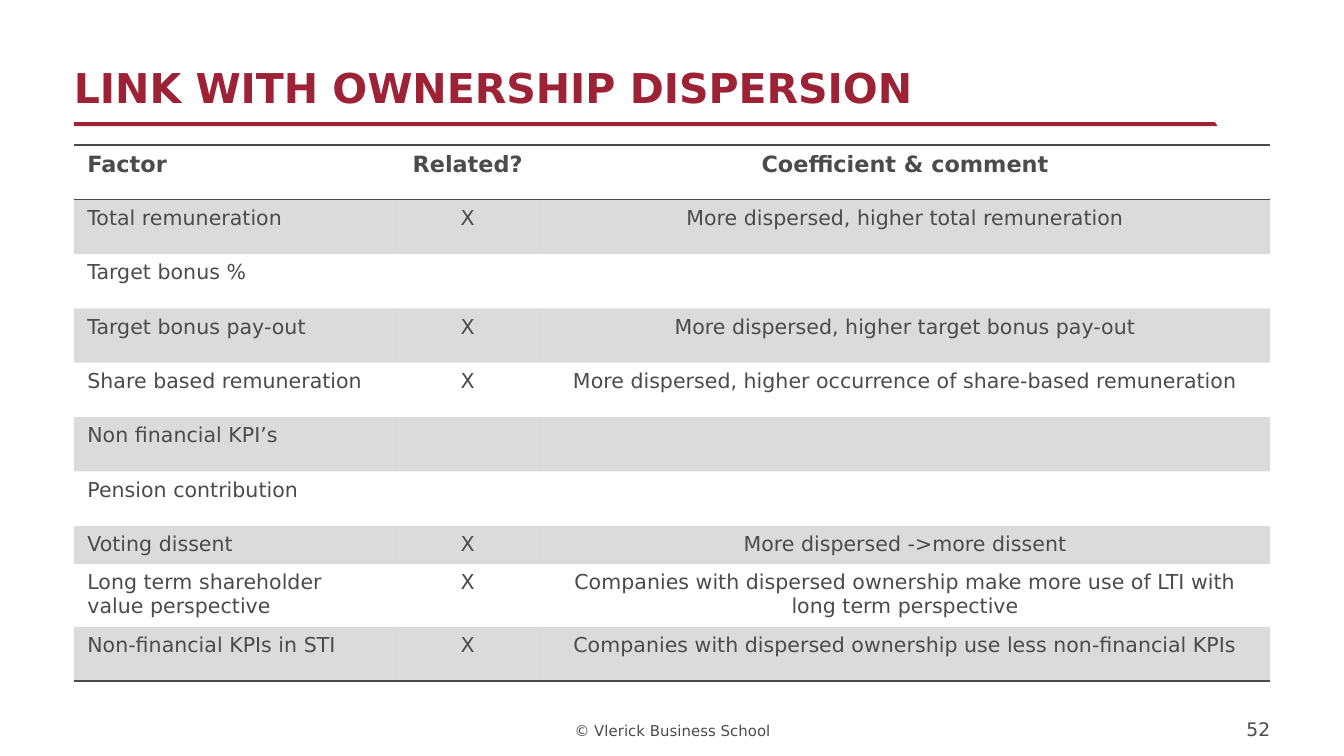
from pptx import Presentation
from pptx.util import Inches, Pt
from pptx.dml.color import RGBColor
from pptx.enum.text import PP_ALIGN, MSO_ANCHOR
from pptx.oxml import parse_xml
from pptx.oxml.ns import nsdecls
from lxml.etree import SubElement

GRAY, RED = "4B4B4B", "9D2235"
LEFT, MID, RIGHT = PP_ALIGN.LEFT, PP_ALIGN.CENTER, PP_ALIGN.RIGHT


def color(code):
    return RGBColor.from_string(code)


def write(frame, text, align, size, code=GRAY, bold=False):
    para = frame.paragraphs[0]
    para.text = text
    para.alignment = align
    look = {"name": "DejaVu Sans", "size": Pt(size), "bold": bold}
    for font in [para.font] + [run.font for run in para.runs]:
        for key, value in look.items():
            setattr(font, key, value)
        font.color.rgb = color(code)


prs = Presentation()
prs.slide_width, prs.slide_height = Inches(10), Inches(5.625)
slide = prs.slides.add_slide(prs.slide_layouts[6])

# Title, footer and page number
texts = [
    ("LINK WITH OWNERSHIP DISPERSION", (0.55, 0, 8.27, 0.83), LEFT, 22, RED, True, 0),
    ("© Vlerick Business School", (3.94, 5.35, 2.13, 0.16), MID, 8, GRAY, False, 0.01),
    ("52", (8.9, 5.35, 0.55, 0.16), RIGHT, 10, GRAY, False, 0),
]
for text, place, align, size, code, bold, foot in texts:
    frame = slide.shapes.add_textbox(*map(Inches, place)).text_frame
    form = {"word_wrap": True, "vertical_anchor": MSO_ANCHOR.BOTTOM,
            "margin_left": 0, "margin_right": 0, "margin_top": 0,
            "margin_bottom": Inches(foot)}
    for key, value in form.items():
        setattr(frame, key, value)
    write(frame, text, align, size, code, bold)

# Rule under the title, with a slanted end
path = slide.shapes.build_freeform(Inches(0.55), Inches(0.91))
path.add_line_segments([(Inches(x), Inches(y)) for x, y in
                        [(9.04, 0.91), (9.06, 0.94), (0.55, 0.94)]], close=True)
rule = path.convert_to_shape()
rule.shadow.inherit = False
rule.fill.solid()
rule.fill.fore_color.rgb = color(RED)
rule.line.fill.background()

# Table
rows = [
    ("Factor", "Related?", "Coefficient & comment"),
    ("Total remuneration", "X", "More dispersed, higher total remuneration"),
    ("Target bonus %", "", ""),
    ("Target bonus pay-out", "X", "More dispersed, higher target bonus pay-out"),
    ("Share based remuneration", "X",
     "More dispersed, higher occurrence of share-based remuneration"),
    ("Non financial KPI’s", "", ""),
    ("Pension contribution", "", ""),
    ("Voting dissent", "X", "More dispersed ->more dissent"),
    ("Long term shareholder value perspective", "X",
     "Companies with dispersed ownership make more use of LTI with long term perspective"),
    ("Non-financial KPIs in STI", "X",
     "Companies with dispersed ownership use less non-financial KPIs"),
]
last = len(rows) - 1
grid = slide.shapes.add_table(len(rows), 3, Inches(0.55), Inches(1.08),
                              Inches(8.9), Inches(3.99)).table
grid.first_row = grid.horz_banding = False
# Plain style without grid lines
grid._tbl.tblPr.find("{*}tableStyleId").text = "{2D5ABB26-0587-4C30-8999-92F81FD0307C}"
for col, width in zip(grid.columns, (2.39, 1.08, 5.43)):
    col.width = Inches(width)

for r, row in enumerate(rows):
    grid.rows[r].height = Inches(0.27 if r == 7 else 3.24 / 8)
    for c, text in enumerate(row):
        cell = grid.cell(r, c)
        write(cell.text_frame, text, MID if c else LEFT, 11 if r else 12, bold=r == 0)
        props = cell._tc.get_or_add_tcPr()

        # Odd rows are tinted
        if r % 2:
            cell.fill.solid()
            cell.fill.fore_color.rgb = color(GRAY)
            tint = props.find(".//{*}srgbClr")
            SubElement(tint, tint.tag.replace("srgbClr", "alpha")).set("val", "20000")
        else:
            cell.fill.background()

        # Lines above and below the header, and under the last row
        sides = {0: ["lnT", "lnB"], last: ["lnB"]}.get(r, [])
        for i, side in enumerate(sides):
            props.insert(i, parse_xml(
                f'<a:{side} {nsdecls("a")} w="12700"><a:solidFill>'
                f'<a:srgbClr val="{GRAY}"/></a:solidFill></a:{side}>'))

prs.save("out.pptx")
